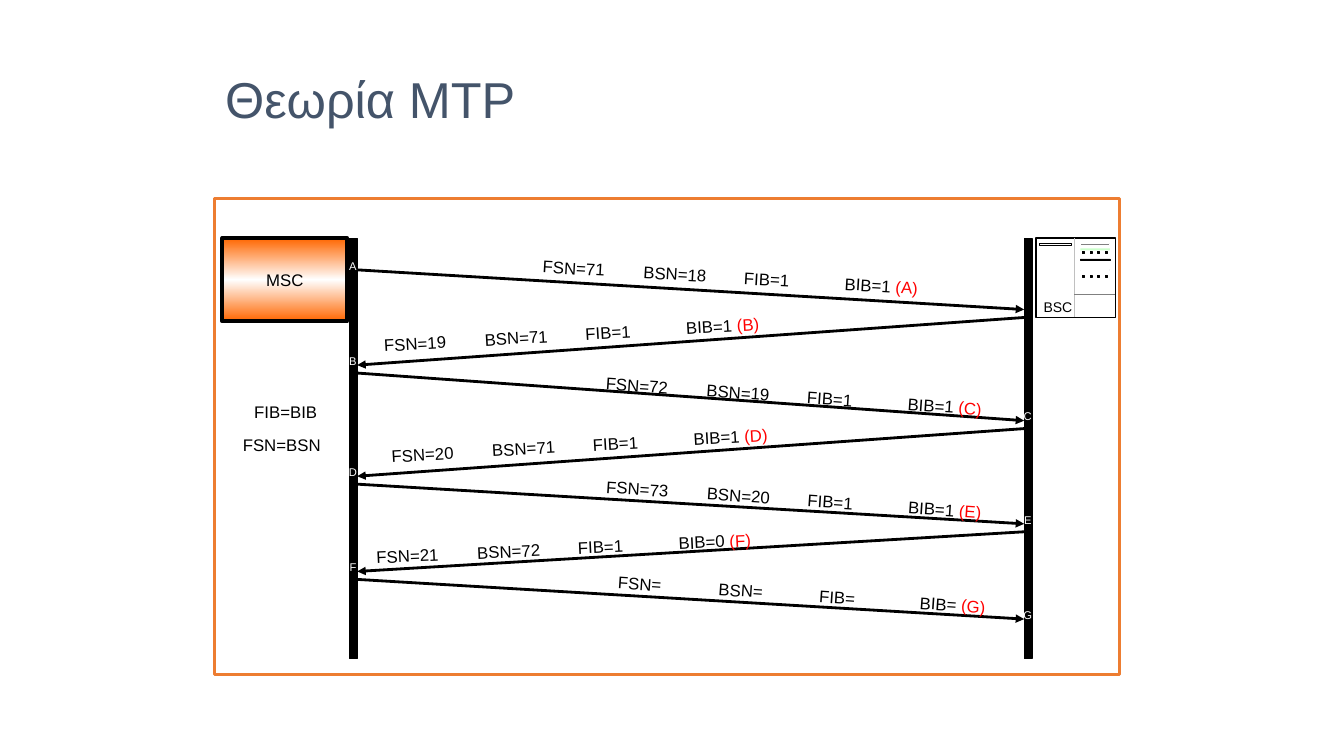
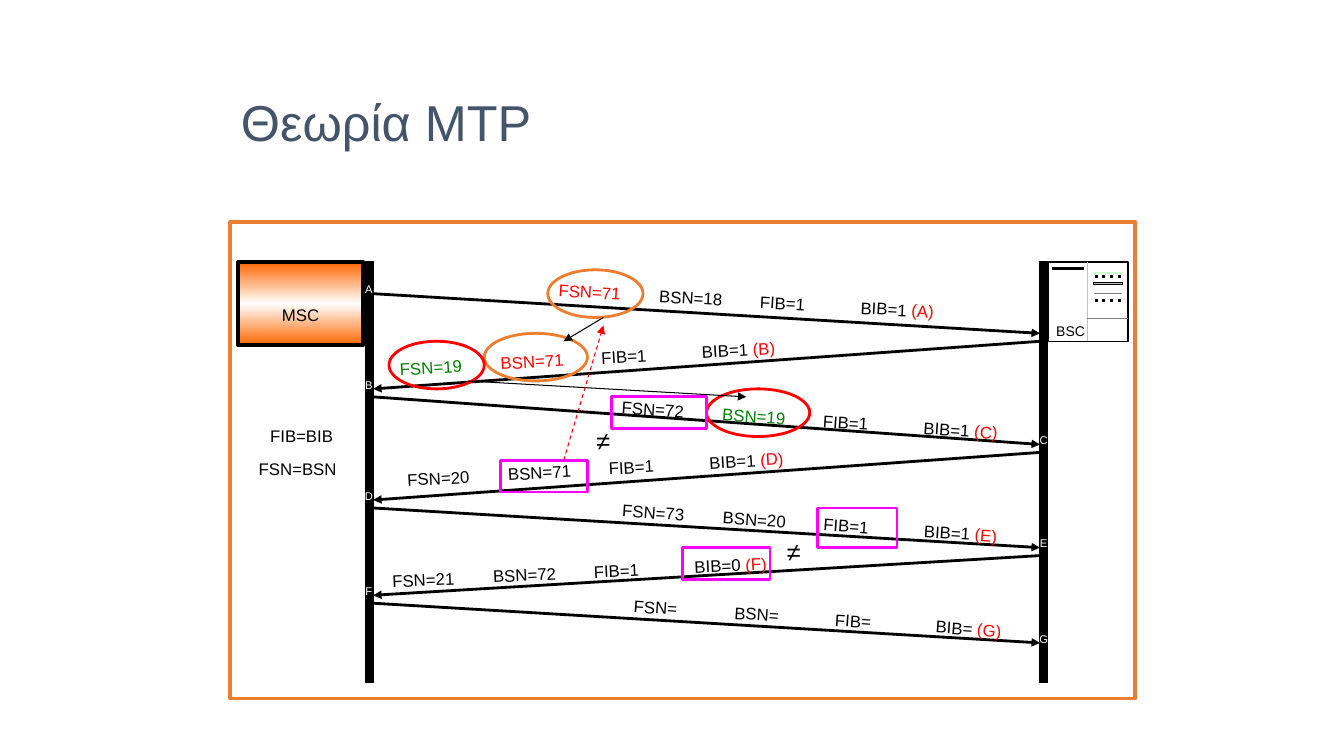
from dataclasses import dataclass
from typing import Any
from lxml.etree import SubElement
from pptx import Presentation
from pptx.dml.color import RGBColor
from pptx.enum.dml import MSO_LINE
from pptx.enum.shapes import MSO_CONNECTOR, MSO_SHAPE
from pptx.enum.text import MSO_ANCHOR, PP_ALIGN
from pptx.oxml.ns import qn
from pptx.util import Inches, Mm, Pt

# Shared look: every place is a column and row of a 2 mm grid
UNIT = Mm(2)
FONT = "Arial"
BLACK, WHITE, RED, GREEN = "000000", "FFFFFF", "FF0000", "008000"
ORANGE, PINK, NAVY, FLAME = "ED7D31", "FF00FF", "44546A", "FF6600"
GRAY, SILVER, MINT = "808080", "C0C0C0", "CCFFCC"
RECT, OVAL = MSO_SHAPE.RECTANGLE, MSO_SHAPE.OVAL
LEFT, RIGHT, TOP = 17, 102, 5  # the two bars

# Label, text column and row, angle, fields, rows the arrow falls
FLOW = [
    ("A", 37, 8, 3.3, "FSN=71 BSN=18 FIB=1 BIB=1", 5),
    ("B", 17, 15.25, -3.3, "FSN=19 BSN=71 FIB=1 BIB=1", 6),
    ("C", 45, 23, 3.9, "FSN=72 BSN=19 FIB=1 BIB=1", 6),
    ("D", 18, 29.2, -3.3, "FSN=20 BSN=71 FIB=1 BIB=1", 6),
    ("E", 45, 36, 3.9, "FSN=73 BSN=20 FIB=1 BIB=1", 5),
    ("F", 16, 42.2, -2.7, "FSN=21 BSN=72 FIB=1 BIB=0", 5),
    ("G", 46, 48, 3.9, "FSN= BSN= FIB= BIB=", 5),
]


def tint(part, code):
    part.rgb = RGBColor.from_string(code)


def write(frame, runs, size, align=PP_ALIGN.CENTER):
    para = frame.paragraphs[0]
    para.alignment = align
    for text, code in runs:
        run = para.add_run()
        run.text = text
        run.font.size, run.font.name = Pt(size), FONT
        tint(run.font.color, code)
    return para


@dataclass
class Pen:
    """Draws in grid units from the corner of one region."""
    into: Any
    col: float
    row: float

    def spot(self, col, row):
        return int((self.col + col) * UNIT), int((self.row + row) * UNIT)

    def shape(self, kind, col, row, wide, high, fill=None, line=None, width=0.75):
        item = self.into.add_shape(kind, *self.spot(col, row), int(wide * UNIT), int(high * UNIT))
        item.shadow.inherit = False
        if fill:
            item.fill.solid()
            tint(item.fill.fore_color, fill)
        else:
            item.fill.background()
        if line:
            tint(item.line.color, line)
            item.line.width = Pt(width)
        else:
            item.line.fill.background()
        return item

    def line(self, start, end, code=BLACK, width=0.75, head=True, dash=False):
        item = self.into.add_connector(MSO_CONNECTOR.STRAIGHT, *self.spot(*start), *self.spot(*end))
        tint(item.line.color, code)
        item.line.width = Pt(width)
        if dash:
            item.line.dash_style = MSO_LINE.DASH
        shell = item.element.spPr
        if head:
            SubElement(shell.find(qn("a:ln")), qn("a:tailEnd"), type="triangle")
        SubElement(shell, qn("a:effectLst"))

    def text(self, col, row, wide, high, runs, size=12, turn=0):
        item = self.into.add_textbox(*self.spot(col, row), int(wide * UNIT), int(high * UNIT))
        item.text_frame.word_wrap = True
        item.rotation = turn
        return write(item.text_frame, runs, size)


def title(pen):
    item = pen.shape(MSO_SHAPE.ROUNDED_RECTANGLE, -0.9, -23, 110, 15.9)
    item.adjustments[0] = 0.217
    item.text_frame.word_wrap = True
    item.text_frame.vertical_anchor = MSO_ANCHOR.BOTTOM
    write(item.text_frame, [("Θεωρία MTP", NAVY)], 36, PP_ALIGN.LEFT).line_spacing = 0.9


def switch(pen, drop):
    # MSC block with a mirrored gradient
    item = pen.shape(RECT, 1, TOP, 15.75, 10.5, WHITE, BLACK, 2.75)
    item.fill.gradient()
    item.fill.gradient_angle = 90
    stops = item.element.find(".//" + qn("a:gsLst"))
    for stop in list(stops):
        stops.remove(stop)
    for place, code in ((0, FLAME), (50, WHITE), (100, FLAME)):
        stop = SubElement(stops, qn("a:gs"), pos=str(place * 1000))
        SubElement(stop, qn("a:srgbClr"), val=code)
    frame = item.text_frame
    frame.vertical_anchor = MSO_ANCHOR.MIDDLE
    frame.margin_top, frame.margin_bottom = Inches(0.04 + drop), Inches(0.04)
    write(frame, [("MSC", BLACK)], 12)


def station(pen):
    # BSC cabinet: case, dividers, slots and lamps
    pen.shape(RECT, 0, 0, 10, 10, WHITE, BLACK, 1)
    pen.line((4.83, 0), (4.83, 10), SILVER, head=False)
    pen.line((4.83, 7.1), (10, 7.1), GRAY, head=False)
    pen.shape(RECT, 0.5, 0.65, 3.94, 0.25, WHITE, BLACK)
    for row, fill, line, width in ((0.65, GRAY, WHITE, 0.75), (3.9, GRAY, WHITE, 0.75),
                                   (1.3, MINT, None, 0), (2.6, SILVER, BLACK, 0.25)):
        pen.shape(RECT, 5.6, row, 3.7, 0.25, fill, line, width)
    for row in (1.75, 4.7):
        for step in range(4):
            pen.shape(RECT, 5.84 + 0.97 * step, row, 0.25, 0.25, BLACK, BLACK)
    pen.text(-1.5, 7, 8.5, 3.4, [("BSC", BLACK)], 10)


def flow(pen, tags, hues):
    # Arrows cross to and fro, one row apart
    row = 9
    for turn, (name, col, top, angle, cells, fall) in enumerate(FLOW):
        ends = [LEFT + 1, RIGHT]
        if turn % 2:
            ends.reverse()
        pen.line((ends[0], row), (ends[1], row + fall), width=2)
        # Fields stand on tab stops one inch apart
        runs = []
        for spot, cell in enumerate(cells.split()):
            tail = "\t" if spot < 3 else " "
            runs.append((cell + tail, hues.get((name, spot), BLACK)))
        runs.append((f"({tags[turn]})", RED))
        para = pen.text(col, top, 56, 3.8, runs, turn=angle)
        tabs = SubElement(para._p.get_or_add_pPr(), qn("a:tabLst"))
        for inch in (1, 2, 3):
            SubElement(tabs, qn("a:tab"), pos=str(Inches(inch)), algn="l")
        # Label on the bar: A where it starts, the others where they land
        bar, level = (LEFT, row) if turn == 0 else (
            LEFT if turn % 2 else RIGHT, row + fall)
        pen.text(bar - 2.2, level - 2, 5.33, 2.9, [(name, WHITE)], 8)
        row += fall + 1


def scene(deck, col, row, tags, side, drop=0, hues={}):
    slide = deck.slides.add_slide(deck.slide_layouts[6])
    pen = Pen(slide.shapes, col, row)
    title(pen)
    station(Pen(slide.shapes.add_group_shape().shapes, col + side, row + TOP))
    switch(pen, drop)
    for bar in (LEFT, RIGHT):
        pen.shape(RECT, bar, TOP, 1, 53, BLACK, BLACK)
    pen.shape(RECT, 0, 0, 114, 60, None, ORANGE, 2.5)
    flow(pen, tags, hues)
    pen.text(3, 25, 12, 3.8, [("FIB=BIB", BLACK)])
    pen.text(2, 29.2, 13, 3.8, [("FSN=BSN", BLACK)])
    return pen


def marks(pen):
    # Rings, boxes and arrows that compare the fields
    for kind, code, *area in (
            (OVAL, ORANGE, 40, 6, 12, 6), (OVAL, ORANGE, 32, 14, 13, 6),
            (OVAL, RED, 20, 15, 12, 6), (OVAL, RED, 60, 21, 13, 6),
            (RECT, PINK, 48, 22, 12, 4), (RECT, PINK, 34, 30, 11, 4),
            (RECT, PINK, 74, 36, 10, 5), (RECT, PINK, 57, 41, 11, 4)):
        pen.shape(kind, *area, None, code, 2)
    for col, row in ((44, 25), (68, 39)):
        pen.text(col, row, 6, 5, [("≠", BLACK)], 18)
    pen.line((47, 12), (42, 15))
    pen.line((30, 20), (65, 22))
    pen.line((42, 30), (47, 13), RED, dash=True)


def main():
    deck = Presentation()
    deck.slide_width, deck.slide_height = Inches(13.33), Inches(7.5)
    scene(deck, 27, 25, "ΑBCDEFG", 103.5)
    hues = {("A", 0): RED, ("B", 0): GREEN, ("B", 1): RED, ("C", 1): GREEN}
    marks(scene(deck, 29, 28, "ABCDEFG", 103.1, 0.23, hues))
    deck.save("out.pptx")


if __name__ == "__main__":
    main()
